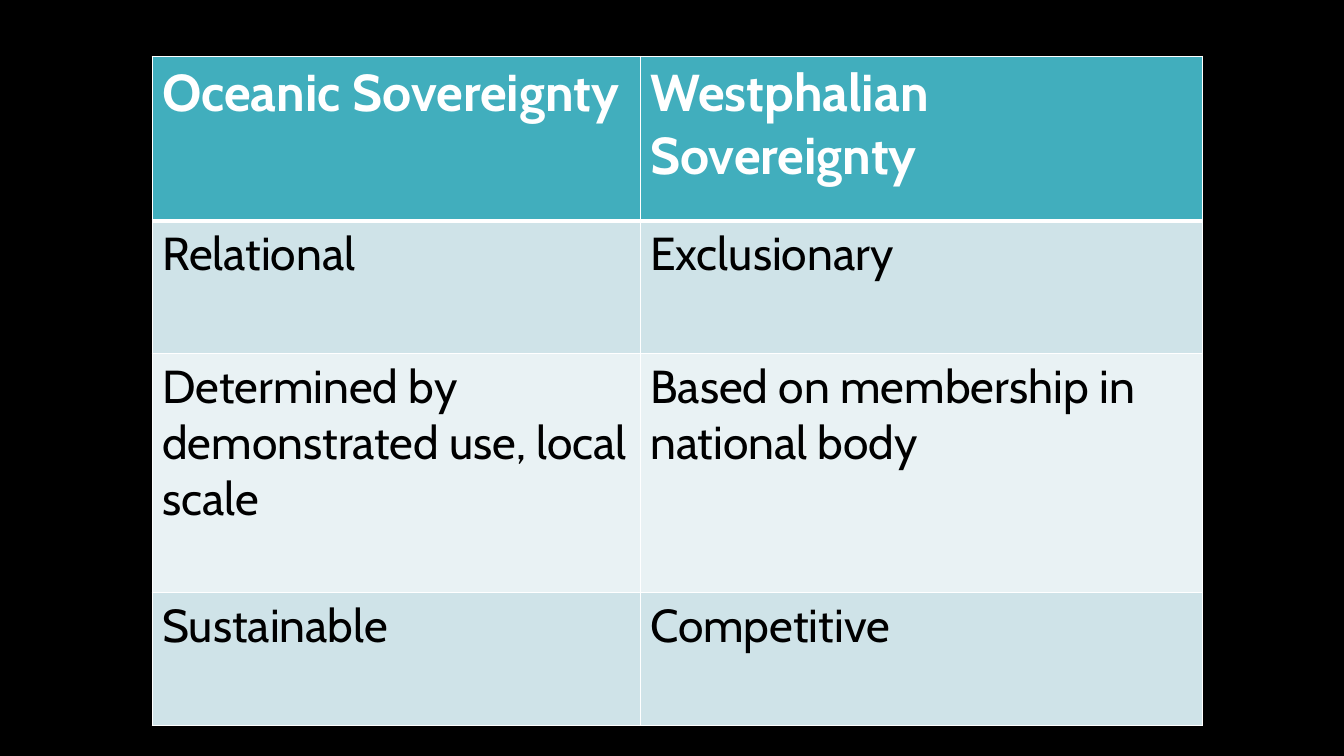
from lxml.etree import SubElement
from pptx import Presentation
from pptx.dml.color import RGBColor
from pptx.oxml.ns import qn
from pptx.util import Inches, Pt

ROWS = [
    ("Oceanic Sovereignty", "Westphalian Sovereignty"),
    ("Relational", "Exclusionary"),
    ("Determined by demonstrated use, local scale",
     "Based on membership in national body"),
    ("Sustainable", "Competitive"),
]
COLUMN_WIDTHS = [4.84, 5.58]
ROW_HEIGHTS = [1.63, 1.32, 2.37, 1.32]


def color(value):
    """Turn a hex string into a colour."""
    return RGBColor.from_string(value)


class SlideBuilder:
    """Holds the table style and the current slide."""

    font = "Cabin"
    background = "000000"
    line = "FFFFFF"
    header_fill = "41AEBD"
    band_fills = ["E9F2F4", "CFE3E8"]

    def __init__(self, page):
        """Take a slide and paint its background."""
        self.page = page
        page.background.fill.solid()
        page.background.fill.fore_color.rgb = color(self.background)

    def border(self, cell, side, width):
        """Draw one side of a cell."""
        edge = SubElement(cell._tc.get_or_add_tcPr(), qn(f"a:ln{side}"),
                          w=str(Pt(width)))
        fill = SubElement(edge, qn("a:solidFill"))
        SubElement(fill, qn("a:srgbClr"), val=self.line)

    def cell(self, cell, text, row):
        """Fill a cell with text, borders and its band colour."""
        header = row == 0
        for side in "LRTB":
            divider = (row, side) in [(0, "B"), (1, "T")]
            self.border(cell, side, 3 if divider else 1)
        cell.fill.solid()
        cell.fill.fore_color.rgb = color(
            self.header_fill if header else self.band_fills[row % 2])
        span = cell.text_frame.paragraphs[0].add_run()
        span.text = text
        span.font.name = self.font
        span.font.size = Pt(37 if header else 33)
        span.font.bold = header
        span.font.color.rgb = color("FFFFFF" if header else "000000")

    def table(self, left, top, widths, heights, rows):
        """Add a table with a header and banded rows."""
        table = self.page.shapes.add_table(
            len(heights), len(widths), Inches(left), Inches(top),
            Inches(sum(widths)), Inches(sum(heights))).table
        for column, width in zip(table.columns, widths):
            column.width = Inches(width)
        for row, height in zip(table.rows, heights):
            row.height = Inches(height)
        for row, texts in enumerate(rows):
            for column, text in enumerate(texts):
                self.cell(table.cell(row, column), text, row)


def main():
    """Build the sovereignty comparison slide."""
    deck = Presentation()
    deck.slide_width, deck.slide_height = Inches(13.33), Inches(7.5)
    builder = SlideBuilder(deck.slides.add_slide(deck.slide_layouts[6]))
    builder.table(1.51, 0.56, COLUMN_WIDTHS, ROW_HEIGHTS, ROWS)
    deck.save("out.pptx")


if __name__ == "__main__":
    main()
